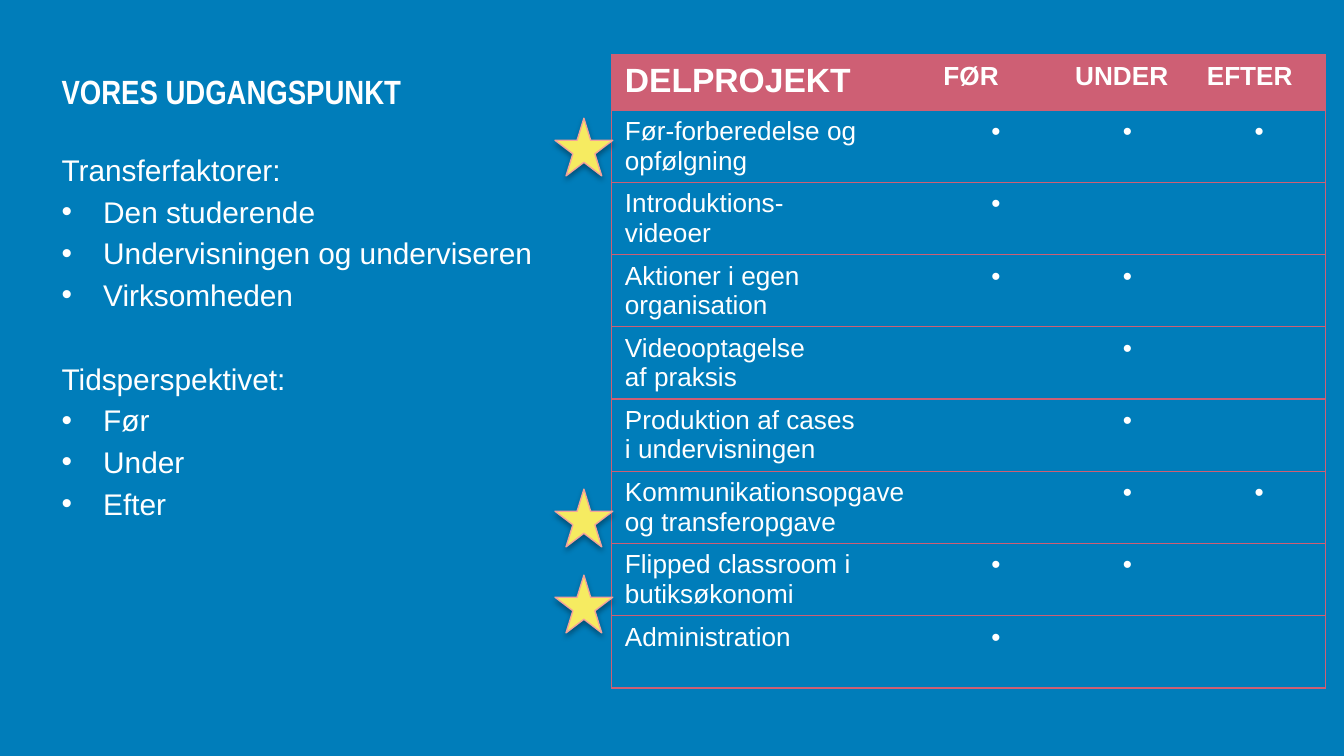
"""Build the slide on transfer factors and the timing of each subproject."""
from lxml import etree
from pptx import Presentation, util as u
from pptx.dml.color import RGBColor
from pptx.enum import shapes, text
from pptx.oxml import ns

TITLE = "VORES UDGANGSPUNKT"
GROUPS = [
    ("Transferfaktorer:", ["Den studerende", "Undervisningen og underviseren", "Virksomheden"]),
    ("Tidsperspektivet:", ["Før", "Under", "Efter"]),
]
HEADERS = ["DELPROJEKT", "FØR", "UNDER", "EFTER"]
PROJECTS = [
    ("Før-forberedelse og opfølgning", (1, 1, 1)),
    ("Introduktions-\nvideoer", (1, 0, 0)),
    ("Aktioner i egen\norganisation", (1, 1, 0)),
    ("Videooptagelse\naf praksis", (0, 1, 0)),
    ("Produktion af cases\ni undervisningen", (0, 1, 0)),
    ("Kommunikationsopgave\nog transferopgave", (0, 1, 1)),
    ("Flipped classroom i\nbutiksøkonomi", (1, 1, 0)),
    ("Administration", (1, 0, 0)),
]
STAR_TOPS = [0.88, 3.64, 4.28]

THEME = {
    "back": "007DBA", "ink": "FFFFFF", "rose": "CE5F74",
    "star": "F6EB61", "star_line": "F2A39B", "shadow": "000000",
    "font": "Arial", "title_font": "Arial Narrow",
    "title": 18, "body": 16, "cell": 14, "line": 0.75,
    "line_gap": 3.1, "group_gap": 25.8,
}
W = 10
H = W * 9 / 16
LEFT, TEXT_W = 0.36, 4.01
TABLE_X, TABLE_Y, TABLE_BOTTOM = 4.55, 0.41, 5.12
HEAD_H, FIRST_W, PHASE_W = 0.41, 2.37, 0.98
ROW_H = (TABLE_BOTTOM - TABLE_Y - HEAD_H) / len(PROJECTS)
STAR = 0.43


def rgb(name):
    return RGBColor.from_string(THEME[name])


def style(p, size, bold=False, font="font"):
    for r in p.runs:
        r.font.name, r.font.size, r.font.bold = THEME[font], u.Pt(THEME[size]), bold
        r.font.color.rgb = rgb("ink")


def add_box(s, top, height):
    tf = s.shapes.add_textbox(*map(u.Inches, (LEFT, top, TEXT_W, height))).text_frame
    tf.word_wrap = True
    return tf


def add_bullet(p):
    pPr = p._p.get_or_add_pPr()
    pPr.set("marL", str(u.Inches(0.31)))
    pPr.set("indent", str(-u.Inches(0.31)))
    etree.SubElement(pPr, ns.qn("a:buFont"), typeface=THEME["font"])
    etree.SubElement(pPr, ns.qn("a:buChar"), char="•")


def add_factors(s):
    tf = add_box(s, 1.08, 3.12)
    lines = [(line, i > 0) for head, items in GROUPS for i, line in enumerate([head, *items])]
    tf.text = "\n".join(line for line, _ in lines)
    for i, (p, (_, bullet)) in enumerate(zip(tf.paragraphs, lines)):
        if i:
            p.space_before = u.Pt(THEME["line_gap" if bullet else "group_gap"])
        if bullet:
            add_bullet(p)
        style(p, "body")


def set_border(cell, side, color):
    ln = etree.SubElement(cell._tc.get_or_add_tcPr(), ns.qn("a:ln" + side), w=str(u.Pt(THEME["line"])))
    if color:
        fill = etree.SubElement(ln, ns.qn("a:solidFill"))
        etree.SubElement(fill, ns.qn("a:srgbClr"), val=THEME[color])
    else:
        etree.SubElement(ln, ns.qn("a:noFill"))


def fill_cell(cell, row, col, value):
    cell.margin_left = cell.margin_right = u.Inches(0.1)
    cell.margin_top, cell.margin_bottom = u.Pt(3.6), 0
    cell.text_frame.text = value
    for p in cell.text_frame.paragraphs:
        if row and col:
            p.alignment = text.PP_ALIGN.CENTER
        style(p, "cell" if row or col else "title", bold=row == 0)
    edges = {"L": col == 0, "R": col == len(HEADERS) - 1, "T": True, "B": True}
    for side, drawn in edges.items():
        set_border(cell, side, "rose" if drawn else None)
    if row:
        cell.fill.background()
    else:
        cell.fill.solid()
        cell.fill.fore_color.rgb = rgb("rose")


def add_projects(s):
    rows = [HEADERS] + [[name] + ["•" if m else "" for m in marks] for name, marks in PROJECTS]
    widths = [FIRST_W] + [PHASE_W] * (len(HEADERS) - 1)
    heights = [HEAD_H] + [ROW_H] * len(PROJECTS)
    box = (TABLE_X, TABLE_Y, sum(widths), sum(heights))
    table = s.shapes.add_table(len(rows), len(widths), *map(u.Inches, box)).table
    table.first_row = table.horz_banding = False
    for column, width in zip(table.columns, widths):
        column.width = u.Inches(width)
    for i, (values, height) in enumerate(zip(rows, heights)):
        table.rows[i].height = u.Inches(height)
        for j, value in enumerate(values):
            fill_cell(table.cell(i, j), i, j, value)


def add_star(s, top):
    box = map(u.Inches, (TABLE_X - STAR + 0.01, top, STAR, STAR))
    sp = s.shapes.add_shape(shapes.MSO_SHAPE.STAR_5_POINT, *box)
    sp.fill.solid()
    sp.fill.fore_color.rgb = rgb("star")
    sp.line.color.rgb = rgb("star_line")
    sp.line.width = u.Pt(THEME["line"])
    sp.shadow.inherit = False
    effects = sp._element.spPr.find(ns.qn("a:effectLst"))
    shadow = etree.SubElement(effects, ns.qn("a:outerShdw"), blurRad=str(u.Pt(3.1)),
                              dist=str(u.Pt(1.8)), dir="5400000", rotWithShape="0")
    color = etree.SubElement(shadow, ns.qn("a:srgbClr"), val=THEME["shadow"])
    etree.SubElement(color, ns.qn("a:alpha"), val="35000")


def main():
    prs = Presentation()
    prs.slide_width, prs.slide_height = u.Inches(W), u.Inches(H)
    s = prs.slides.add_slide(prs.slide_layouts[6])
    s.background.fill.solid()
    s.background.fill.fore_color.rgb = rgb("back")
    tf = add_box(s, 0.45, 0.43)
    tf.vertical_anchor = text.MSO_ANCHOR.BOTTOM
    tf.text = TITLE
    style(tf.paragraphs[0], "title", bold=True, font="title_font")
    add_factors(s)
    add_projects(s)
    for top in STAR_TOPS:
        add_star(s, top)
    prs.save("out.pptx")


if __name__ == "__main__":
    main()
